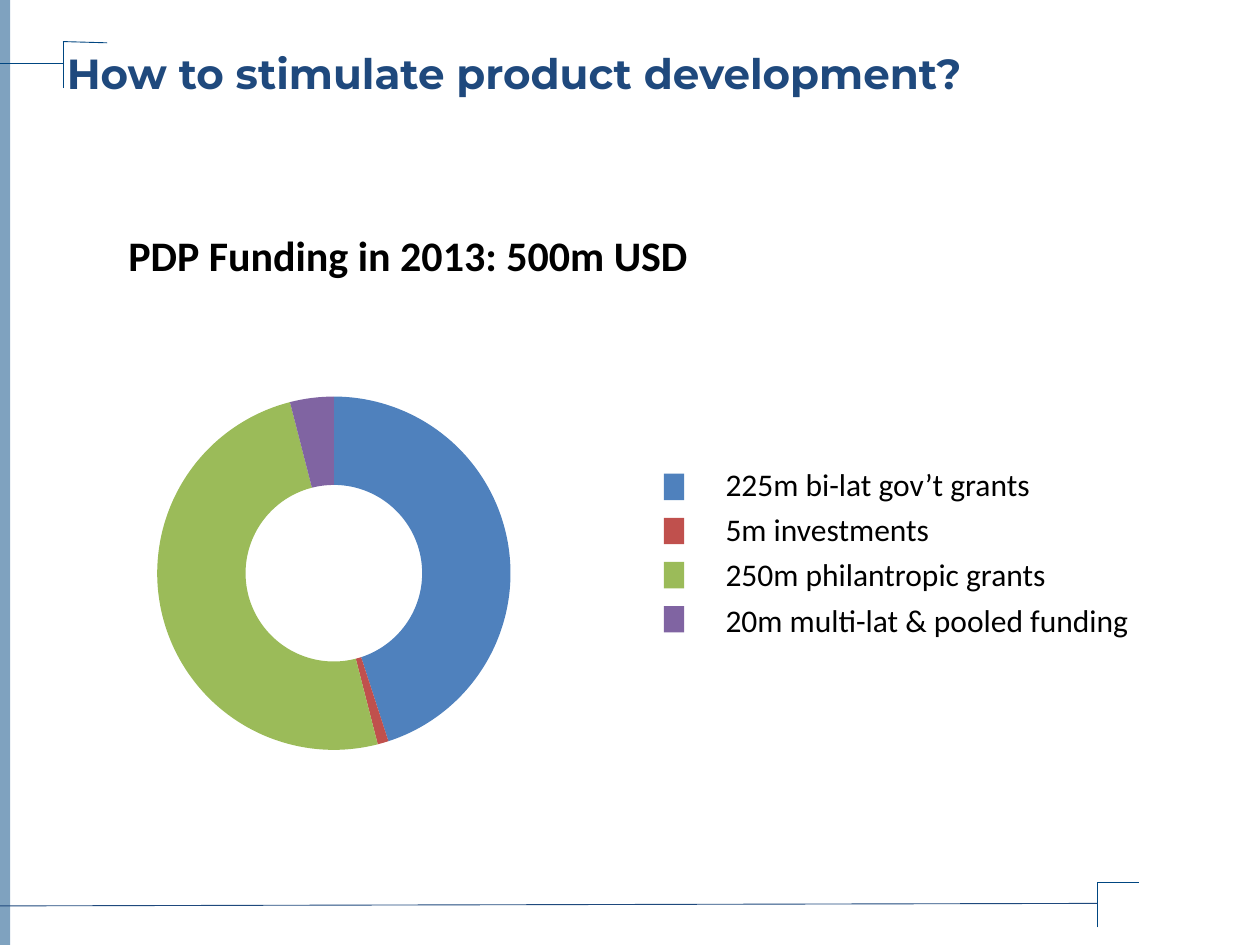
from dataclasses import dataclass

from lxml import etree
from pptx import Presentation
from pptx import util as u
from pptx.chart.data import CategoryChartData
from pptx.dml.color import RGBColor
from pptx.enum import chart as ch, shapes, text
from pptx.oxml.ns import qn

# Lengths are columns and rows of a 100 x 75 grid
COLS, ROWS = 100, 75
SLIDE_W, SLIDE_H = u.Inches(10), u.Inches(7.5)

COLORS = {
    "frame": "004681", "navy": "1F497D", "black": "000000",
    "blue": "4F81BD", "red": "C0504D", "green": "9BBB59", "purple": "8064A2",
}


@dataclass
class Funding:
    label: str
    percent: int
    color: str


@dataclass
class Rule:
    x1: float
    y1: float
    x2: float
    y2: float
    color: str = "frame"


FUNDING = [
    Funding("225m bi-lat gov’t grants", 45, "blue"),
    Funding("5m investments", 1, "red"),
    Funding("250m philantropic grants", 50, "green"),
    Funding("20m multi-lat & pooled funding", 4, "purple"),
]

RULES = [
    Rule(0, 5, 5, 5),
    Rule(5, 3.3, 8.5, 3.4),
    Rule(5, 7, 5, 3.3),
    Rule(87.1, 70, 90.4, 70),
    Rule(87.1, 73.6, 87.1, 70),
    Rule(87.1, 71.7, 0, 71.9, "navy"),
]


def rgb(name: str) -> RGBColor:
    return RGBColor.from_string(COLORS[name])


def x(cols: float) -> int:
    return round(SLIDE_W * cols / COLS)


def y(rows: float) -> int:
    return round(SLIDE_H * rows / ROWS)


def box(left: float, top: float, width: float, height: float) -> tuple:
    return x(left), y(top), x(width), y(height)


def add_rect(s, at: tuple, color: str, alpha: int = 100) -> None:
    sp = s.shapes.add_shape(shapes.MSO_SHAPE.RECTANGLE, *box(*at))
    sp.shadow.inherit = False
    sp.fill.solid()
    sp.fill.fore_color.rgb = rgb(color)
    sp.line.fill.background()
    if alpha < 100:
        clr = sp.fill._xPr.find(".//" + qn("a:srgbClr"))
        etree.SubElement(clr, qn("a:alpha"), val=str(alpha * 1000))


def add_rule(s, rule: Rule) -> None:
    line = s.shapes.add_connector(
        shapes.MSO_CONNECTOR.STRAIGHT,
        x(rule.x1), y(rule.y1), x(rule.x2), y(rule.y2))
    line.line.color.rgb = rgb(rule.color)
    line.line.width = u.Pt(0.5)
    etree.SubElement(line._element.spPr, qn("a:effectLst"))


def add_text(s, at: tuple, words: str, *, size: float = 18, font: str = "Calibri",
             color: str = "black", bold: bool = False, inset: bool = True) -> None:
    tf = s.shapes.add_textbox(*box(*at)).text_frame
    tf.word_wrap = True
    tf.auto_size = text.MSO_AUTO_SIZE.SHAPE_TO_FIT_TEXT
    if not inset:
        tf.margin_left = tf.margin_right = tf.margin_top = tf.margin_bottom = 0
    r = tf.paragraphs[0].add_run()
    r.text = words
    r.font.size = u.Pt(size)
    r.font.name = font
    r.font.bold = bold
    r.font.color.rgb = rgb(color)


def add_doughnut(s, at: tuple, parts: list[Funding]) -> None:
    data = CategoryChartData()
    data.categories = [str(n) for n in range(1, len(parts) + 1)]
    data.add_series("Series 1", [part.percent for part in parts])
    chart = s.shapes.add_chart(ch.XL_CHART_TYPE.DOUGHNUT, *box(*at), data).chart
    chart.has_legend = False
    chart.has_title = False
    chart.font.name = "Calibri"
    chart.font.size = u.Pt(10)
    chart.font.color.rgb = rgb("black")
    plot = chart.plots[0]
    plot.vary_by_categories = True
    for i, part in enumerate(parts):
        fmt = plot.series[0].points[i].format
        fmt.fill.solid()
        fmt.fill.fore_color.rgb = rgb(part.color)
        fmt.line.fill.background()


def main() -> None:
    prs = Presentation()
    prs.slide_width, prs.slide_height = SLIDE_W, SLIDE_H
    s = prs.slides.add_slide(prs.slide_layouts[6])

    # Frame: side band and corner rules
    add_rect(s, (0, 0, 0.8, ROWS), "frame", alpha=50)
    for rule in RULES:
        add_rule(s, rule)

    # Headings
    add_text(s, (9.2, 17.7, 59.6, 5), "PDP Funding in 2013: 500m USD",
             size=24, bold=True)
    add_text(s, (5.3, 3.8, 93.1, 4), "How to stimulate product development?",
             size=24, font="Montserrat", color="navy", bold=True, inset=False)

    # Funding shares and their key
    add_doughnut(s, (9, 30.1, 35, 30.8), FUNDING)
    for i, part in enumerate(FUNDING):
        add_rect(s, (52.7, 37.6 + 3.5 * i, 1.6, 2.1), part.color)
        add_text(s, (56.6, 36.4 + 3.6 * i, 35.1, 4), part.label)

    prs.save("out.pptx")


if __name__ == "__main__":
    main()
